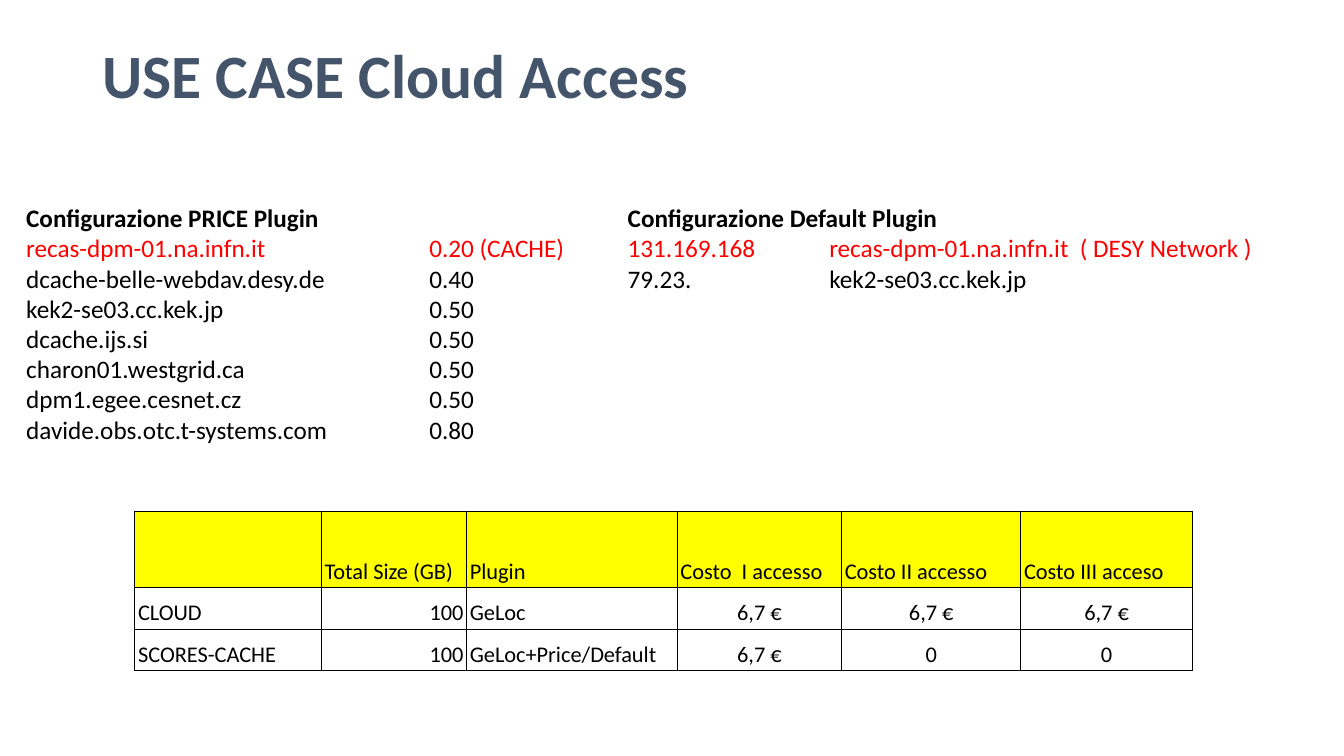
import pptx
import pptx.dml.color
import pptx.enum.text
import pptx.oxml
import pptx.oxml.ns
import pptx.util
from lxml import etree

Cm = pptx.util.Cm
Pt = pptx.util.Pt
RGBColor = pptx.dml.color.RGBColor
ALIGN = pptx.enum.text.PP_ALIGN
ANCHOR = pptx.enum.text.MSO_ANCHOR

BLACK = RGBColor(0x00, 0x00, 0x00)
RED = RGBColor(0xFF, 0x00, 0x00)
YELLOW = RGBColor(0xFF, 0xFF, 0x00)
SLATE = RGBColor(0x44, 0x54, 0x6A)


def apply(target, values):
    for name, value in values.items():
        setattr(target, name, value)


def margins(horizontal, vertical):
    return {"margin_left": Cm(horizontal), "margin_right": Cm(horizontal),
            "margin_top": Cm(vertical), "margin_bottom": Cm(vertical)}


class SlideWriter:
    font_name = "Calibri"

    def __init__(self, slide):
        self.slide = slide

    def style(self, paragraph, size, color=BLACK, bold=False):
        apply(paragraph.font, {"name": self.font_name, "size": Pt(size), "bold": bold})
        paragraph.font.color.rgb = color

    def text_frame(self, left, top, width, height, insets):
        box = self.slide.shapes.add_textbox(Cm(left), Cm(top), Cm(width), Cm(height))
        apply(box.text_frame, {"word_wrap": True, "vertical_anchor": ANCHOR.TOP, **insets})
        return box.text_frame

    def title(self, text):
        frame = self.text_frame(2.34, 1.02, 29.21, 3.68, margins(0.25, 0.13))
        heading = frame.paragraphs[0]
        apply(heading, {"text": text, "line_spacing": 0.9})
        self.style(heading, 44, SLATE, True)

    def settings(self, left, width, tab, heading, entries):
        """A bold heading over two tabbed columns, the first entry in red."""
        frame = self.text_frame(left, 4.85, width, 5.11, margins(0.25, 0.25))
        frame.text = "\n".join([heading] + ["\t".join(entry) for entry in entries])
        for index, line in enumerate(frame.paragraphs):
            if index:
                properties = line._p.get_or_add_pPr()
                tabs = etree.SubElement(properties, pptx.oxml.ns.qn("a:tabLst"))
                etree.SubElement(tabs, pptx.oxml.ns.qn("a:tab"), pos=str(Cm(tab)), algn="l")
            self.style(line, 18, RED if index == 1 else BLACK, index == 0)

    def borders(self, cell):
        properties = cell._tc.get_or_add_tcPr()
        for side in "LRTB":
            properties.append(pptx.oxml.parse_xml(
                f'<a:ln{side} {pptx.oxml.ns.nsdecls("a")} w="{Pt(0.75)}"><a:solidFill>'
                f'<a:srgbClr val="{BLACK}"/></a:solidFill></a:ln{side}>'))

    def table(self, left, top, widths, heights, rows, alignments):
        table = self.slide.shapes.add_table(
            len(rows), len(widths), Cm(left), Cm(top),
            Cm(sum(widths)), Cm(sum(heights))).table
        apply(table, {"first_row": False, "horz_banding": False})
        for column, width in zip(table.columns, widths):
            column.width = Cm(width)
        for r, (row, height) in enumerate(zip(rows, heights)):
            table.rows[r].height = Cm(height)
            for c, text in enumerate(row):
                cell = table.cell(r, c)
                apply(cell, {"text": text, "vertical_anchor": ANCHOR.BOTTOM,
                             **margins(0.08, 0.05)})
                self.borders(cell)
                if r == 0:
                    cell.fill.solid()
                    cell.fill.fore_color.rgb = YELLOW
                else:
                    cell.fill.background()
                paragraph = cell.text_frame.paragraphs[0]
                apply(paragraph, {"line_spacing": 1.15,
                                  "alignment": alignments[c] if r else ALIGN.LEFT})
                self.style(paragraph, 16)


def main():
    deck = pptx.Presentation()
    apply(deck, {"slide_width": Cm(33.87), "slide_height": Cm(19.05)})
    writer = SlideWriter(deck.slides.add_slide(deck.slide_layouts[6]))

    # Plugin settings
    writer.settings(0.41, 14.58, 10.16, "Configurazione PRICE Plugin", [
        ("recas-dpm-01.na.infn.it", "0.20 (CACHE)"),
        ("dcache-belle-webdav.desy.de", "0.40"),
        ("kek2-se03.cc.kek.jp", "0.50"),
        ("dcache.ijs.si", "0.50"),
        ("charon01.westgrid.ca", "0.50"),
        ("dpm1.egee.cesnet.cz", "0.50"),
        ("davide.obs.otc.t-systems.com", "0.80"),
    ])
    writer.settings(15.57, 16.81, 5.08, "Configurazione Default Plugin", [
        ("131.169.168", "recas-dpm-01.na.infn.it  ( DESY Network )"),
        ("79.23.", "kek2-se03.cc.kek.jp"),
    ])

    # Access costs
    writer.table(
        3.4, 12.88, [4.7, 3.66, 5.31, 4.14, 4.52, 4.32], [1.93, 1.04, 1.04],
        [("", "Total Size (GB)", "Plugin",
          "Costo  I accesso", "Costo II accesso", "Costo III acceso"),
         ("CLOUD", "100", "GeLoc", "6,7 €", "6,7 €", "6,7 €"),
         ("SCORES-CACHE", "100", "GeLoc+Price/Default", "6,7 €", "0", "0")],
        [ALIGN.LEFT, ALIGN.RIGHT, ALIGN.LEFT] + [ALIGN.CENTER] * 3)

    # Title
    writer.title("USE CASE Cloud Access")

    deck.save("out.pptx")


if __name__ == "__main__":
    main()
